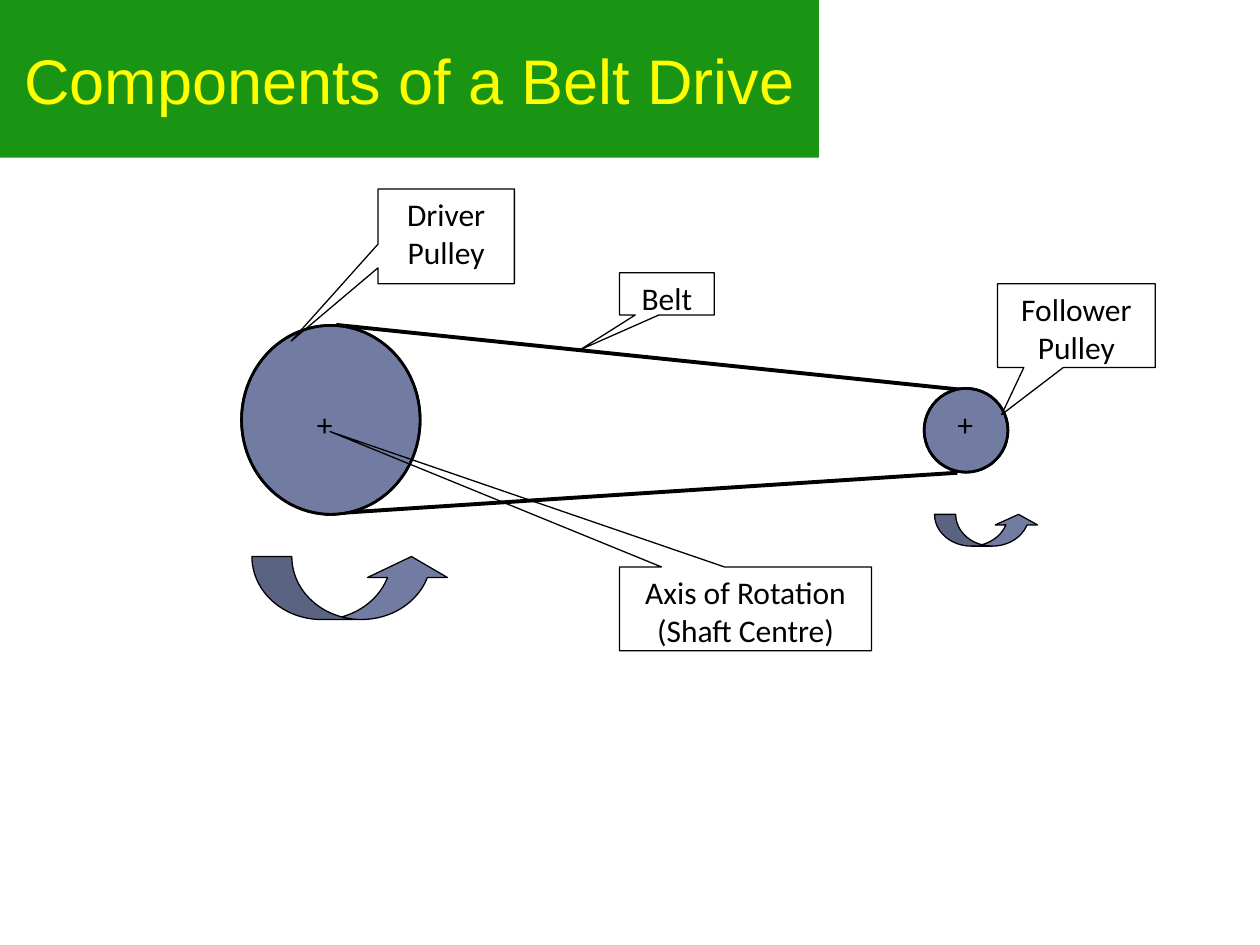
from lxml.etree import SubElement
from pptx import Presentation
from pptx.dml.color import RGBColor
from pptx.enum.shapes import MSO_CONNECTOR, MSO_SHAPE as Preset
from pptx.enum.text import MSO_ANCHOR as Anchor, MSO_AUTO_SIZE as AutoSize, PP_ALIGN as Align
from pptx.oxml.ns import qn
from pptx.util import Cm, Pt

COLORS = {"banner": "199513", "title": "FFFF00", "pulley": "727CA3",
          "ink": "000000", "paper": "FFFFFF"}

TITLE = "Components of a Belt Drive"
# Boxes are left, top, width, height in centimetres.
TITLE_BOX = (0, 0, 16.51, 3.18)
BELT_RUNS = [(6.78, 6.55, 19.51, 7.87), (6.55, 10.36, 19.3, 9.53)]
PULLEYS = [(4.87, 6.56, 3.6, 3.81), (18.63, 7.83, 1.69, 1.69)]
# Lines of text, box, pointer offset as a share of the box, fill
CALLOUTS = [
    (["Belt"], (12.49, 5.5, 1.91, 0.85), (-0.917, 1.328), "paper"),
    (["Follower Pulley"], (20.11, 5.72, 3.18, 1.69), (-0.474, 1.062), "paper"),
    (["Driver", "Pulley"], (7.62, 3.81, 2.75, 1.91), (-1.136, 1.106), "paper"),
]
AXIS_CALLOUT = (["Axis of Rotation (Shaft Centre)"], (12.49, 11.43, 5.08, 1.69),
                (-1.649, -2.115), None)
SHAFT_CENTRES = [((6.14, 8.05, 0.84, 1.02), Align.LEFT),
                 ((19.05, 8.05, 0.64, 1.02), Align.CENTER)]
ROTATION_ARROWS = [((5.08, 11.22, 4.02, 1.27), (0.633, 1.267, 0.333)),
                   ((18.84, 10.37, 2.12, 0.64), (0.667, 1.333, 0.333))]


def rgb(name):
    return RGBColor.from_string(COLORS[name])


def lengths(values):
    return [Cm(value) for value in values]


def write_text(shape, lines, size=18, font="Calibri", color="ink",
               align=Align.CENTER, anchor=Anchor.TOP):
    frame = shape.text_frame
    frame.word_wrap = True
    frame.vertical_anchor = anchor
    frame.text = "\n".join(lines)
    for paragraph in frame.paragraphs:
        paragraph.alignment = align
        paragraph.font.size = Pt(size)
        paragraph.font.name = font
        paragraph.font.color.rgb = rgb(color)
    return frame


def add_outlined(slide, preset, box, fill=None, line_width=0.75, adjustments=()):
    shape = slide.shapes.add_shape(preset, *lengths(box))
    shape.shadow.inherit = False
    if fill:
        shape.fill.solid()
        shape.fill.fore_color.rgb = rgb(fill)
    else:
        shape.fill.background()
    shape.line.color.rgb = rgb("ink")
    shape.line.width = Pt(line_width)
    for index, value in enumerate(adjustments):
        shape.adjustments[index] = value
    return shape


def add_belt_run(slide, ends):
    belt = slide.shapes.add_connector(MSO_CONNECTOR.STRAIGHT, *lengths(ends))
    belt.line.color.rgb = rgb("ink")
    belt.line.width = Pt(2.25)
    SubElement(belt._element.spPr, qn("a:effectLst"))


def add_callout(slide, lines, box, pointer, fill):
    callout = add_outlined(slide, Preset.RECTANGULAR_CALLOUT, box, fill, adjustments=pointer)
    write_text(callout, lines)


def add_title(slide):
    title = slide.shapes.title
    title.left, title.top, title.width, title.height = lengths(TITLE_BOX)
    title.fill.solid()
    title.fill.fore_color.rgb = rgb("banner")
    write_text(title, [TITLE], size=36, font="Arial", color="title", anchor=Anchor.MIDDLE)


def main():
    presentation = Presentation()
    presentation.slide_width, presentation.slide_height = Cm(25.4), Cm(19.05)
    slide = presentation.slides.add_slide(presentation.slide_layouts[5])
    add_title(slide)
    for ends in BELT_RUNS:
        add_belt_run(slide, ends)
    for box in PULLEYS:
        add_outlined(slide, Preset.OVAL, box, "pulley", 1.5)
    for callout in CALLOUTS:
        add_callout(slide, *callout)
    for box, align in SHAFT_CENTRES:
        mark = slide.shapes.add_textbox(*lengths(box))
        write_text(mark, ["+"], align=align).auto_size = AutoSize.SHAPE_TO_FIT_TEXT
    add_callout(slide, *AXIS_CALLOUT)
    for box, adjustments in ROTATION_ARROWS:
        add_outlined(slide, Preset.CURVED_UP_ARROW, box, "pulley", adjustments=adjustments)
    # Rims stay in front of the callout pointers.
    for box in PULLEYS:
        add_outlined(slide, Preset.OVAL, box, line_width=1.5)
    presentation.save("out.pptx")


if __name__ == "__main__":
    main()
